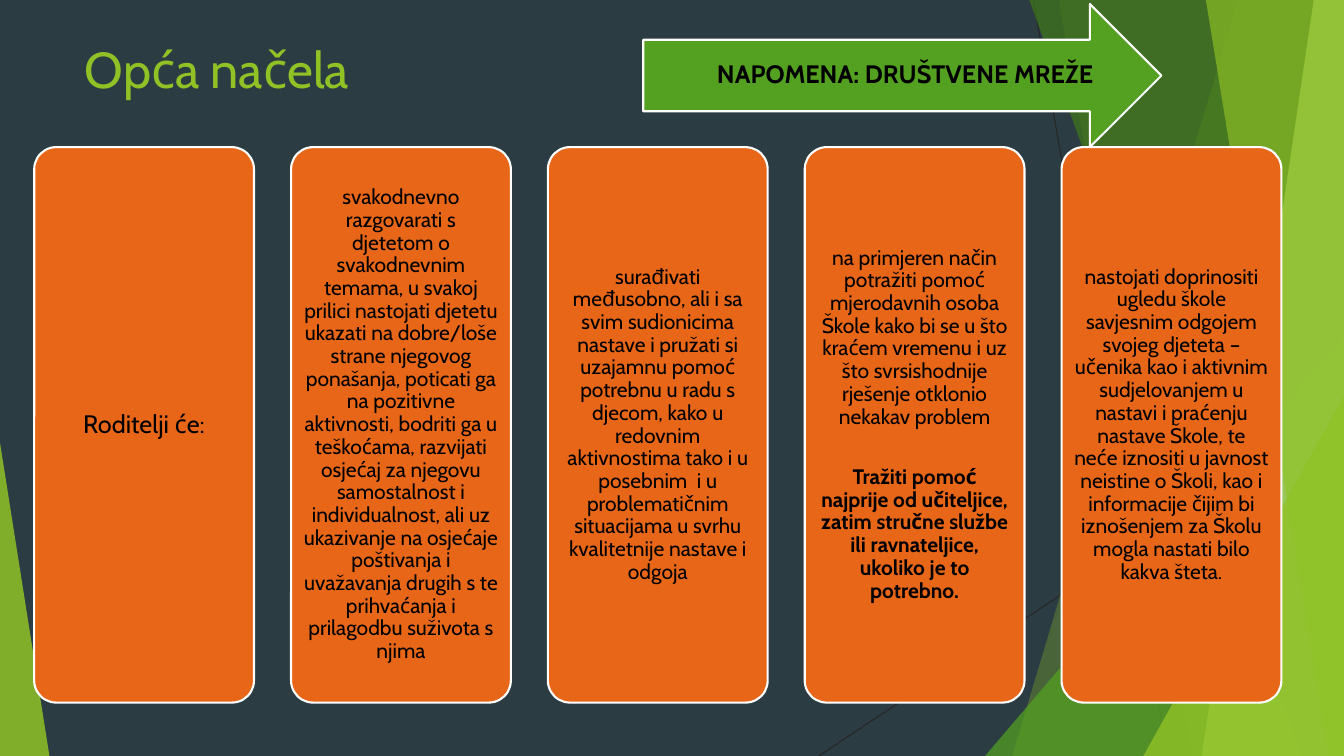
from lxml.etree import SubElement
from pptx import Presentation
from pptx.dml.color import RGBColor
from pptx.enum.shapes import MSO_CONNECTOR, MSO_SHAPE
from pptx.enum.text import MSO_ANCHOR, PP_ALIGN
from pptx.oxml.ns import qn
from pptx.util import Inches, Pt

WIDTH, HEIGHT = Inches(13.33), Inches(7.5)
FONT = "Cabin"

SLATE = RGBColor(0x2C, 0x3C, 0x43)
LIME = RGBColor(0x90, 0xC2, 0x26)
PALE_LIME = RGBColor(0xC0, 0xE4, 0x74)
GREEN = RGBColor(0x54, 0xA0, 0x21)
DARK_GREEN = RGBColor(0x3F, 0x78, 0x19)
ORANGE = RGBColor(0xE7, 0x66, 0x18)
CHARCOAL = RGBColor(0x26, 0x26, 0x26)
WHITE = RGBColor(0xFF, 0xFF, 0xFF)
BLACK = RGBColor(0, 0, 0)

# Card grid, in percent of the slide
CARD_LEFT, CARD_PITCH, CARD_WIDTH = 2.55, 19.11, 16.35
CARD_TOP, CARD_HEIGHT = 19.47, 73.47

# Each card: text size and paragraphs as (text, bold)
CARDS = [
    (18, [("Roditelji će:", False)]),
    (15, [("svakodnevno razgovarati s djetetom o svakodnevnim temama, u svakoj "
           "prilici nastojati djetetu ukazati na dobre/loše strane njegovog "
           "ponašanja, poticati ga na pozitivne aktivnosti, bodriti ga u "
           "teškoćama, razvijati osjećaj za njegovu samostalnost i "
           "individualnost, ali uz ukazivanje na osjećaje poštivanja i "
           "uvažavanja drugih s te prihvaćanja i prilagodbu suživota s njima",
           False)]),
    (15, [("surađivati međusobno, ali i sa svim sudionicima nastave i pružati "
           "si uzajamnu pomoć potrebnu u radu s djecom, kako u redovnim "
           "aktivnostima tako i u posebnim  i u problematičnim situacijama u "
           "svrhu kvalitetnije nastave i odgoja", False)]),
    (15, [("na primjeren način potražiti pomoć mjerodavnih osoba Škole kako bi "
           "se u što kraćem vremenu i uz što svrsishodnije rješenje otklonio "
           "nekakav problem", False),
          ("Tražiti pomoć najprije od učiteljice, zatim stručne službe ili "
           "ravnateljice, ukoliko je to potrebno.", True)]),
    (15, [("nastojati doprinositi ugledu škole savjesnim odgojem svojeg djeteta "
           "– učenika kao i aktivnim sudjelovanjem u nastavi i praćenju nastave "
           "Škole, te neće iznositi u javnost neistine o Školi, kao i "
           "informacije čijim bi iznošenjem za Školu mogla nastati bilo kakva "
           "šteta.", False)]),
]


def across(percent):
    return round(WIDTH * percent / 100)


def down(percent):
    return round(HEIGHT * percent / 100)


def place(left, top, width, height):
    return across(left), down(top), across(width), down(height)


def add_run(p, text, size, color=BLACK, bold=False):
    r = p.add_run()
    r.text = text
    r.font.name, r.font.size, r.font.bold = FONT, Pt(size), bold
    r.font.color.rgb = color


def tint(sp, color, opacity):
    """Fill a decorative facet with a see-through colour."""
    sp.shadow.inherit = False
    sp.line.fill.background()
    sp.fill.solid()
    sp.fill.fore_color.rgb = color
    srgb = sp.fill._xPr.find(".//" + qn("a:srgbClr"))
    SubElement(srgb, qn("a:alpha"), val=str(opacity * 1000))


def add_hairline(s, x1, y1, x2, y2):
    line = s.shapes.add_connector(
        MSO_CONNECTOR.STRAIGHT, across(x1), down(y1), across(x2), down(y2))
    line.line.color.rgb = CHARCOAL
    line.line.width = Pt(0.75)
    SubElement(line._element.spPr, qn("a:effectLst"))


def add_band(s, top_x, bottom_x, color, opacity):
    """A full-height facet between a slanted edge and the right side."""
    builder = s.shapes.build_freeform(across(top_x), 0)
    builder.add_line_segments(
        [(WIDTH, 0), (WIDTH, HEIGHT), (across(bottom_x), HEIGHT)], close=True)
    tint(builder.convert_to_shape(), color, opacity)


def add_corner(s, left, top, width, apex, color, opacity):
    """A triangular facet standing on the bottom edge."""
    sp = s.shapes.add_shape(MSO_SHAPE.ISOSCELES_TRIANGLE,
                            *place(left, top, width, 100 - top))
    sp.adjustments[0] = apex
    tint(sp, color, opacity)


def add_panel(s, preset, box, fill, size, paragraphs, inset=0.06):
    sp = s.shapes.add_shape(preset, *place(*box))
    sp.shadow.inherit = False
    sp.fill.solid()
    sp.fill.fore_color.rgb = fill
    sp.line.color.rgb = WHITE
    sp.line.width = Pt(1.5)
    tf = sp.text_frame
    tf.word_wrap = True
    tf.vertical_anchor = MSO_ANCHOR.MIDDLE
    tf.margin_left = tf.margin_right = Inches(inset)
    tf.margin_top = tf.margin_bottom = Inches(inset)
    for i, (text, bold) in enumerate(paragraphs):
        p = tf.add_paragraph() if i else tf.paragraphs[0]
        p.alignment = PP_ALIGN.CENTER
        p.line_spacing = 0.9
        p.space_before = Pt(27 if i else 0)
        add_run(p, text, size, bold=bold)
    return sp


def add_title(s, text):
    title = s.shapes.title
    title.left, title.top, title.width, title.height = place(5.55, 4.4, 70.52, 19.2)
    tf = title.text_frame
    tf.vertical_anchor = MSO_ANCHOR.TOP
    p = tf.paragraphs[0]
    p.alignment = PP_ALIGN.LEFT
    add_run(p, text, 36, LIME)


def add_backdrop(s):
    s.background.fill.solid()
    s.background.fill.fore_color.rgb = SLATE
    add_hairline(s, 76.89, 0, 86.87, 100)
    add_hairline(s, 100, 53.73, 60.92, 100)
    add_band(s, 92.12, 75.32, LIME, 30)
    add_band(s, 78.77, 88.75, LIME, 20)
    add_corner(s, 73.29, 44.4, 26.71, 1, GREEN, 72)
    add_band(s, 76.59, 96.85, DARK_GREEN, 70)
    add_band(s, 97.75, 89.42, PALE_LIME, 70)
    add_band(s, 89.72, 98.87, LIME, 65)
    add_corner(s, 85.07, 52.4, 14.93, 1, LIME, 80)
    add_corner(s, 0, 58.53, 3.68, 0, LIME, 85)


def main():
    prs = Presentation()
    prs.slide_width, prs.slide_height = WIDTH, HEIGHT
    s = prs.slides.add_slide(prs.slide_layouts[5])
    add_backdrop(s)
    add_title(s, "Opća načela")

    # Cards
    for i, (size, paragraphs) in enumerate(CARDS):
        box = (CARD_LEFT + i * CARD_PITCH, CARD_TOP, CARD_WIDTH, CARD_HEIGHT)
        card = add_panel(s, MSO_SHAPE.ROUNDED_RECTANGLE, box, ORANGE, size, paragraphs)
        card.adjustments[0] = 0.1

    # Note arrow
    arrow = add_panel(s, MSO_SHAPE.RIGHT_ARROW, (47.86, 0.53, 38.56, 18.93), GREEN,
                      18, [("NAPOMENA: DRUŠTVENE MREŽE", True)], inset=0)
    arrow.text_frame.margin_left = Inches(0.41)

    prs.save("out.pptx")


if __name__ == "__main__":
    main()
